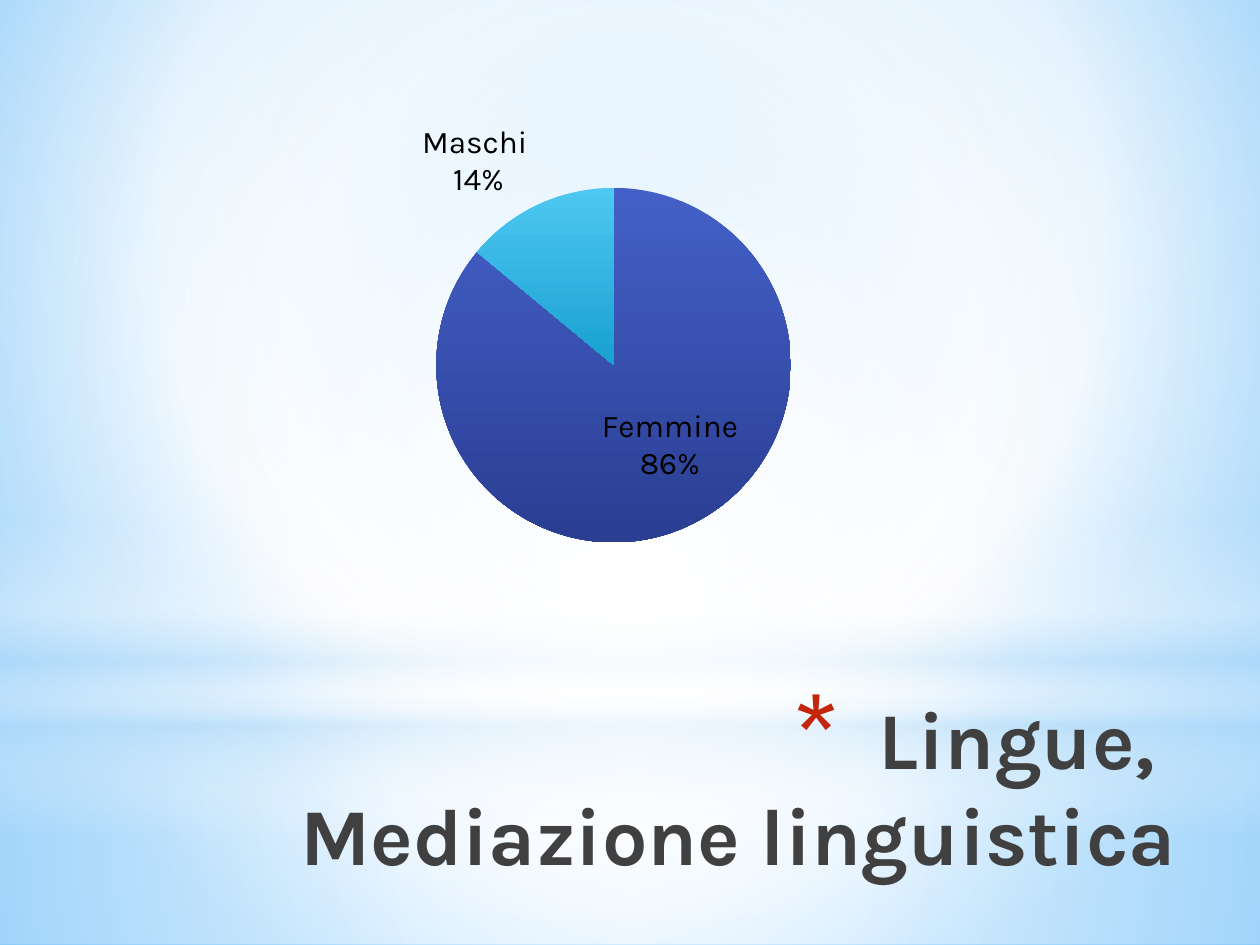
from pptx import Presentation
from pptx.chart.data import CategoryChartData
from pptx.dml.color import RGBColor
from pptx.enum.chart import XL_CHART_TYPE as CT, XL_LABEL_POSITION as LP
from pptx.enum.shapes import MSO_SHAPE as SH
from pptx.enum.text import MSO_ANCHOR, MSO_AUTO_SIZE, PP_ALIGN
from pptx.oxml.ns import qn
from pptx.util import Pt
from lxml.etree import SubElement


def rgb(value):
    return RGBColor.from_string(value)


def child(parent, tag, **attrs):
    return SubElement(parent, qn(tag), {k: str(v) for k, v in attrs.items()})


def set_gradient(fill, root, stops, focus=None):
    fill.gradient()
    grad = root.find(".//" + qn("a:gradFill"))
    for old in list(grad):
        grad.remove(old)
    gs_list = child(grad, "a:gsLst")
    for pos, color, alpha in stops:
        gs = child(gs_list, "a:gs", pos=pos * 1000)
        clr = child(gs, "a:srgbClr", val=color)
        if alpha < 100:
            child(clr, "a:alpha", val=alpha * 1000)
    if focus:
        path_fill = child(grad, "a:path", path="circle")
        child(path_fill, "a:fillToRect", **{k: v * 1000 for k, v in zip("ltrb", focus)})
    else:
        child(grad, "a:lin", ang=90 * 60000, scaled=0)


def set_layout(parent, index, **values):
    for old in parent.findall(qn("c:layout")):
        parent.remove(old)
    layout = parent.makeelement(qn("c:layout"), {})
    parent.insert(index, layout)
    manual = child(layout, "c:manualLayout")
    for key, value in values.items():
        child(manual, f"c:{key}", val=value)


class Deck:
    """Holds the style and the current slide, and draws each kind of element."""

    font = "Karla"
    text = "404040"
    accent = "C3260C"
    center = (50, 50, 50, 50)

    def __init__(self, width, height):
        self.prs = Presentation()
        self.prs.slide_width, self.prs.slide_height = Pt(width), Pt(height)
        self.s = self.prs.slides.add_slide(self.prs.slide_layouts[5])

    def background(self, stops, focus):
        set_gradient(self.s.background.fill, self.s._element, stops, focus)

    def glow(self, kind, x, y, w, h, stops, focus=None):
        sp = self.s.shapes.add_shape(kind, Pt(x), Pt(y), Pt(w), Pt(h))
        sp.shadow.inherit = False
        sp.line.fill.background()
        set_gradient(sp.fill, sp._element, stops, focus)

    def title(self, lines, x, y, w, h, size, hang):
        sp = self.s.shapes.title
        sp.left, sp.top, sp.width, sp.height = Pt(x), Pt(y), Pt(w), Pt(h)
        self.s.shapes._spTree.append(sp._element)
        tf = sp.text_frame
        tf.word_wrap = True
        tf.auto_size = MSO_AUTO_SIZE.NONE
        tf.vertical_anchor = MSO_ANCHOR.TOP
        p = tf.paragraphs[0]
        for i, line in enumerate(lines):
            if i:
                p.add_line_break()
            p.add_run().text = line
        p.alignment = PP_ALIGN.RIGHT
        p.font.name, p.font.size, p.font.bold = self.font, Pt(size), True
        p.font.color.rgb = rgb(self.text)
        pPr = p._p.get_or_add_pPr()
        pPr.set("marL", str(Pt(hang)))
        pPr.set("indent", str(-Pt(hang)))
        bullet = pPr.makeelement(qn("a:buClr"), {})
        child(bullet, "a:srgbClr", val=self.accent)
        pPr.insert(0, bullet)
        bullet.addnext(pPr.makeelement(qn("a:buSzPct"), {"val": "150000"}))
        pPr[1].addnext(pPr.makeelement(qn("a:buFont"), {"typeface": self.font}))
        pPr[2].addnext(pPr.makeelement(qn("a:buChar"), {"char": "*"}))

    def pie(self, slices, x, y, w, h, size, plot_box):
        data = CategoryChartData()
        data.categories = [name for name, *_ in slices]
        data.add_series("Series 1", [value for _, value, *_ in slices])
        chart = self.s.shapes.add_chart(CT.PIE, Pt(x), Pt(y), Pt(w), Pt(h), data).chart
        chart.has_legend = chart.has_title = False
        chart.font.name, chart.font.size = self.font, Pt(size)
        chart.font.color.rgb = rgb("000000")
        plot = chart.plots[0]
        plot.vary_by_categories = True
        labels = plot.series[0].data_labels
        labels.show_category_name = labels.show_percentage = True
        labels.show_value = False
        labels.number_format, labels.number_format_is_linked = "0%", False
        for i, (_, _, top, bottom, position, _) in enumerate(slices):
            point = plot.series[0].points[i]
            fill = point.format.fill
            fill.gradient()
            fill.gradient_angle = 270
            for stop, color in zip(fill.gradient_stops, (top, bottom)):
                stop.color.rgb = rgb(color)
            point.data_label.position = position
        for dlbl, (*_, shift) in zip(chart._chartSpace.iter(qn("c:dLbl")), slices):
            for tag, on in (("c:showVal", 0), ("c:showCatName", 1), ("c:showPercent", 1)):
                dlbl.find(qn(tag)).set("val", str(on))
            if shift:
                set_layout(dlbl, 1, x=shift, y=0)
        left, top, width, height = plot_box
        set_layout(chart._chartSpace.find(".//" + qn("c:plotArea")), 0,
                   layoutTarget="inner", xMode="edge", yMode="edge",
                   x=left, y=top, w=width, h=height)


def main():
    white, sky = "FFFFFF", "B4DCFA"
    d = Deck(720, 540)
    d.background([(0, "9ED5FF", 100), (60, white, 100), (100, "5BB9FF", 100)],
                 (20, 10, 20, 60))
    d.glow(SH.RECTANGLE, 0, 402, 720, 138,
           [(0, white, 91), (37, white, 76), (100, sky, 79)], d.center)
    d.glow(SH.RECTANGLE, 0, 0, 720, 402,
           [(0, white, 89), (48, white, 62), (100, sky, 79)], d.center)
    d.glow(SH.RECTANGLE, 0, 297, 720, 180,
           [(0, white, 0), (29, white, 30), (45, sky, 40),
            (55, white, 26), (65, sky, 60), (100, white, 0)])
    d.glow(SH.OVAL, 0, 126, 720, 402, [(0, white, 100), (56, white, 0)], d.center)
    d.title(["Lingue, ", "Mediazione linguistica"], 55, 390, 624, 90, 46, 50)
    d.pie([("Femmine", 86, "4460C8", "2A3E92", LP.CENTER, 0.02),
           ("Maschi ", 14, "4EC8F2", "18A0D0", LP.OUTSIDE_END, 0)],
          89, 59, 534, 302.4, 18, (0.3, 0.16, 0.38, 0.67))
    d.prs.save("out.pptx")


if __name__ == "__main__":
    main()
